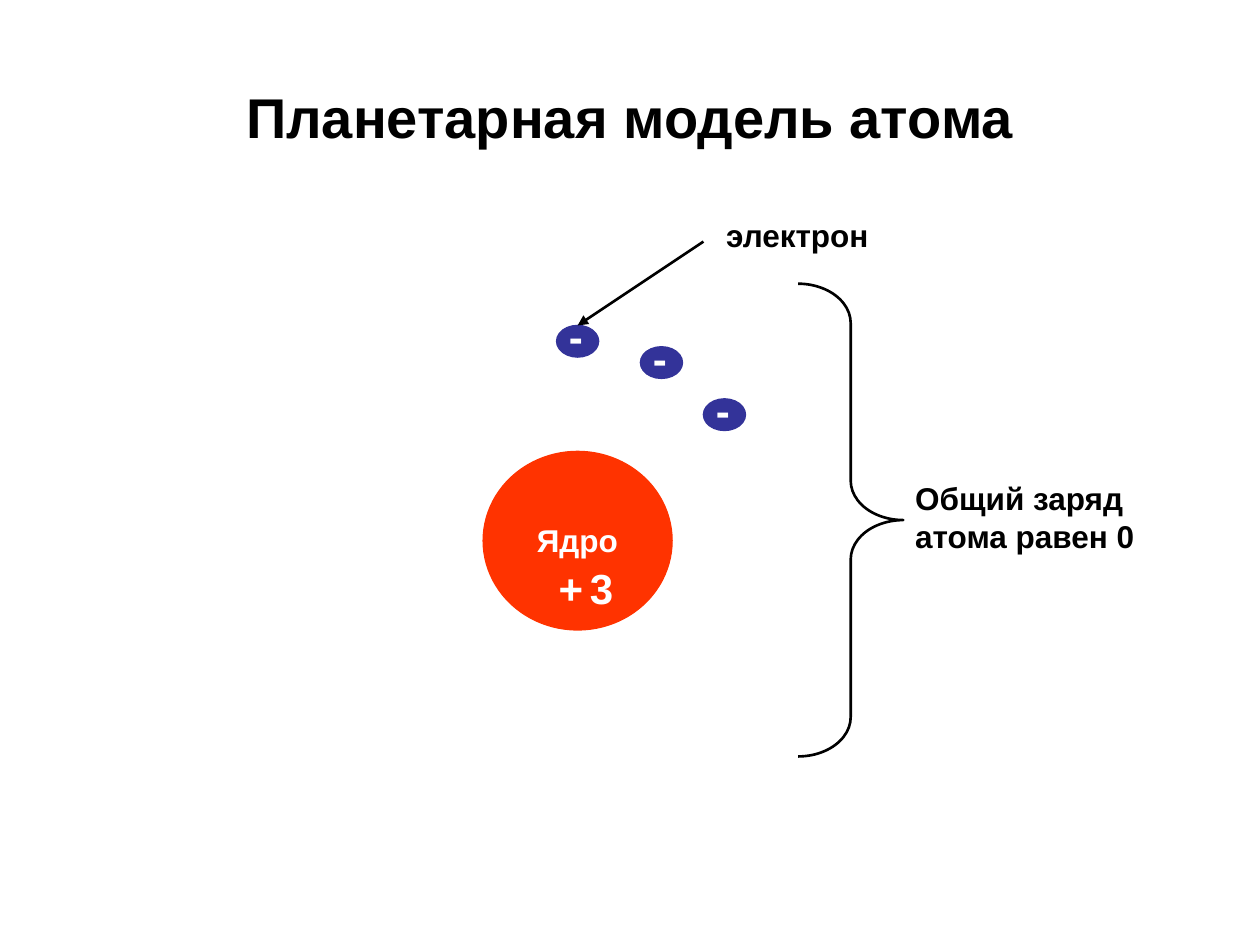
from lxml.etree import SubElement
from pptx import Presentation
from pptx.dml.color import RGBColor
from pptx.enum.shapes import MSO_CONNECTOR as Connector, MSO_SHAPE as Shape
from pptx.enum.text import MSO_ANCHOR as Anchor, PP_ALIGN as Align
from pptx.oxml.ns import qn
from pptx.util import Cm, Pt

COLORS = {"ink": "000000", "light": "FFFFFF", "electron": "333399", "nucleus": "FF3300"}


def color(name):
    return RGBColor.from_string(COLORS[name])


def write(frame, text, size=18, ink="ink", align=Align.LEFT, anchor=Anchor.TOP):
    frame.word_wrap = True
    frame.vertical_anchor = anchor
    paragraph = frame.paragraphs[0]
    paragraph.alignment = align
    run = paragraph.add_run()
    run.text = text
    run.font.name = "Arial"
    run.font.size = Pt(size)
    run.font.bold = True
    run.font.color.rgb = color(ink)


class AtomSlide:
    """Draws the elements of an atom diagram on one slide."""

    line_width = Pt(1.5)
    outline_width = Pt(0.75)

    def __init__(self, slide):
        self.slide = slide

    def text(self, text, left, top, width, height, parent=None, **style):
        shapes = (parent or self.slide).shapes
        box = shapes.add_textbox(Cm(left), Cm(top), Cm(width), Cm(height))
        write(box.text_frame, text, **style)

    def ellipse(self, fill, left, top, width, height, parent=None):
        shapes = (parent or self.slide).shapes
        ellipse = shapes.add_shape(Shape.OVAL, Cm(left), Cm(top), Cm(width), Cm(height))
        ellipse.shadow.inherit = False
        ellipse.fill.solid()
        ellipse.fill.fore_color.rgb = color(fill)
        ellipse.line.color.rgb = color(fill)
        ellipse.line.width = self.outline_width
        return ellipse

    def electron(self, left, top):
        ellipse = self.ellipse("electron", left, top, 0.85, 0.64)
        self.text("-", left, top - 0.42, 0.64, 1.27,
                  size=24, ink="light", align=Align.CENTER)
        return ellipse

    def nucleus(self, left, top):
        group = self.slide.shapes.add_group_shape()
        self.ellipse("nucleus", left, top, 3.81, 3.6, parent=group)
        self.text("Ядро", left + 0.63, top + 1.27, 2.54, 1.02, parent=group,
                  ink="light", align=Align.CENTER)
        for sign, offset in (("+", 1.27), ("3", 1.9)):
            self.text(sign, left + offset, top + 2.12, 0.85, 1.27, size=24, ink="light")

    def arrow(self, left, top, target):
        arrow = self.slide.shapes.add_connector(
            Connector.STRAIGHT, Cm(left), Cm(top), target.left, target.top)
        arrow.end_connect(target, 0)
        arrow.line.color.rgb = color("ink")
        arrow.line.width = self.line_width
        properties = arrow.line._get_or_add_ln()
        SubElement(properties, qn("a:tailEnd"), type="triangle")
        SubElement(arrow._element.spPr, qn("a:effectLst"))

    def brace(self, left, top, width, height):
        brace = self.slide.shapes.add_shape(
            Shape.RIGHT_BRACE, Cm(left), Cm(top), Cm(width), Cm(height))
        brace.adjustments[0] = 0.375
        brace.shadow.inherit = False
        brace.fill.background()
        brace.line.color.rgb = color("ink")
        brace.line.width = self.line_width


def main():
    presentation = Presentation()
    presentation.slide_width, presentation.slide_height = Cm(25.4), Cm(19.05)
    atom = AtomSlide(presentation.slides.add_slide(presentation.slide_layouts[6]))

    atom.text("Планетарная модель атома", 1.27, 0.76, 22.86, 3.18,
              size=32, align=Align.CENTER, anchor=Anchor.MIDDLE)
    atom.nucleus(9.74, 9.1)
    electrons = [atom.electron(left, top)
                 for left, top in ((11.22, 6.56), (12.91, 6.99), (14.18, 8.04))]
    atom.arrow(14.18, 4.87, electrons[0])
    atom.text("электрон", 14.39, 4.23, 4.02, 1.02)
    atom.brace(16.09, 5.72, 2.12, 9.53)
    atom.text("Общий заряд атома равен 0", 18.2, 9.53, 6.56, 1.78)

    presentation.save("out.pptx")


if __name__ == "__main__":
    main()
